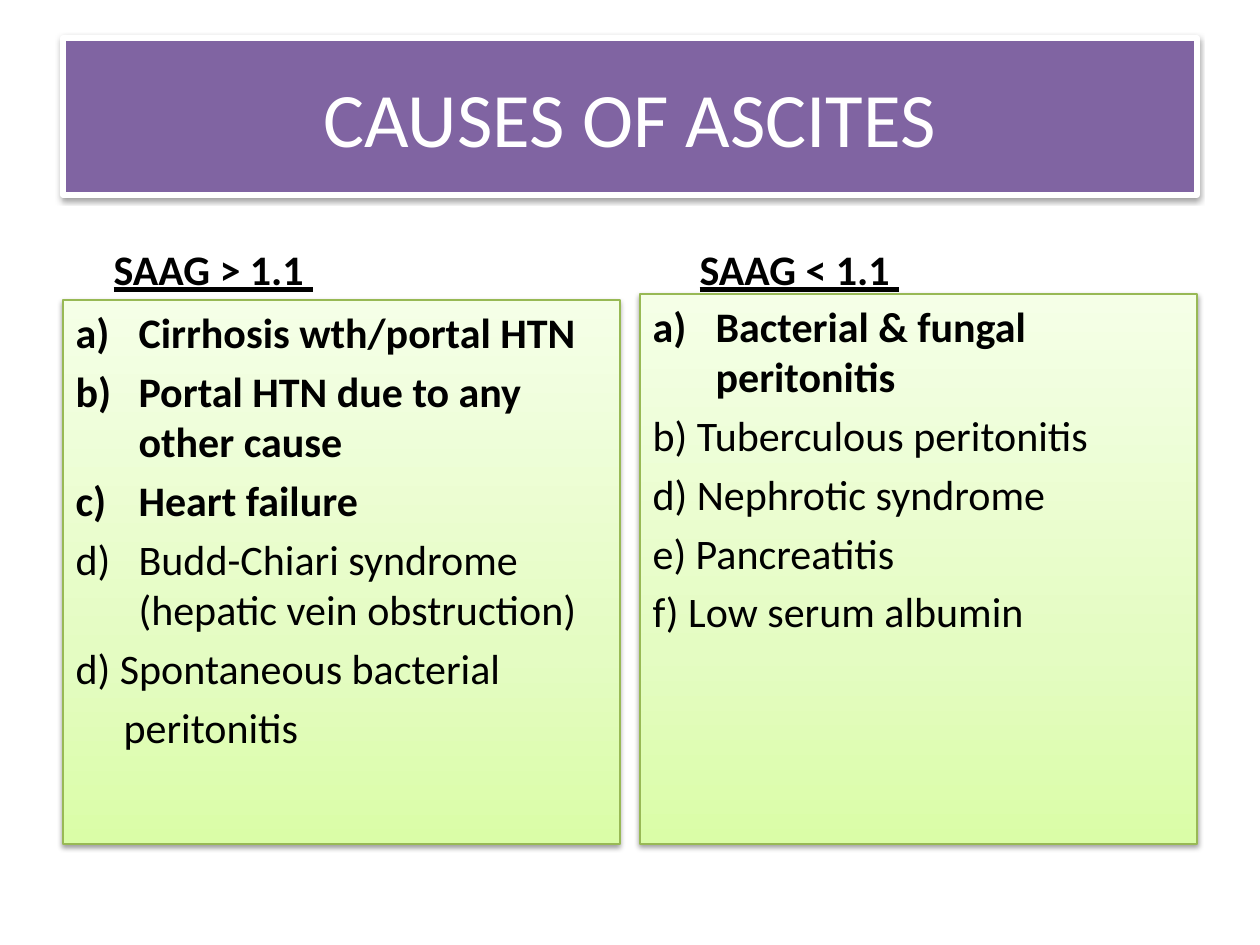
from dataclasses import dataclass

from lxml import etree
from pptx import Presentation
from pptx import util as u
from pptx.dml.color import RGBColor
from pptx.enum import text
from pptx.oxml import ns

PX = 914400 / 126


@dataclass(frozen=True)
class Theme:
    """Colours and type sizes of the slide."""
    font: str = "Calibri"
    purple: str = "8064A2"
    white: str = "FFFFFF"
    black: str = "000000"
    green_line: str = "98B955"
    green_stops: tuple = ((0, "DAFDA7"), (35, "E4FCC2"), (100, "F5FFE7"))
    title_size: int = 44
    body_size: int = 24


THEME = Theme()
COLUMNS = (
    dict(left=63, top=300, heading="SAAG > 1.1 ", heading_indent=38, causes=(
        ("Cirrhosis wth/portal HTN", True, True),
        ("Portal HTN due to any other cause", True, True),
        ("Heart failure", True, True),
        ("Budd-Chiari syndrome (hepatic vein obstruction)", True, False),
        ("d) Spontaneous bacterial", False, False),
        ("peritonitis", False, False, 48))),
    dict(left=640, top=294, heading="SAAG < 1.1 ", heading_indent=47, causes=(
        ("Bacterial & fungal peritonitis", True, True),
        ("b) Tuberculous peritonitis", False, False),
        ("d) Nephrotic syndrome", False, False),
        ("e) Pancreatitis", False, False),
        ("f) Low serum albumin", False, False))),
)


def px(length):
    """Turn px into EMU."""
    return u.Emu(round(length * PX))


def add_xml(parent, tag, **attributes):
    """Append a DrawingML element and return it."""
    return etree.SubElement(parent, ns.qn(tag), {k: str(v) for k, v in attributes.items()})


def place(holder, box, anchor):
    """Move a placeholder to a box and return its text frame."""
    holder.left, holder.top, holder.width, holder.height = map(px, box)
    frame = holder.text_frame
    frame.word_wrap = True
    frame.auto_size = text.MSO_AUTO_SIZE.NONE
    frame.vertical_anchor = anchor
    return frame


def style(paragraph, size, color, bold=False, underline=False):
    """Format the runs of a paragraph."""
    for run in paragraph.runs:
        font = run.font
        font.name, font.size = THEME.font, u.Pt(size)
        font.bold, font.underline = bold, underline
        font.color.rgb = RGBColor.from_string(color)


def indent(paragraph, left, hanging=0, numbering=None):
    """Set the indent and the numbering of a paragraph."""
    properties = paragraph._p.get_or_add_pPr()
    properties.set("marL", str(px(left)))
    properties.set("indent", str(px(-hanging)))
    if numbering:
        add_xml(properties, "a:buFont", typeface="+mj-lt")
        add_xml(properties, "a:buAutoNum", type=numbering)
    else:
        add_xml(properties, "a:buNone")


def outline_and_shadow(shape, color, width):
    """Give a panel its border and soft drop shadow."""
    shape.line.color.rgb = RGBColor.from_string(color)
    shape.line.width = u.Pt(width)
    effects = add_xml(shape._element.spPr, "a:effectLst")
    shadow = add_xml(effects, "a:outerShdw", blurRad=u.Pt(3.1), dist=u.Pt(1.6),
                     dir=5400000, rotWithShape=0)
    add_xml(add_xml(shadow, "a:srgbClr", val=THEME.black), "a:alpha", val=38000)


def green_gradient(shape):
    """Fill a panel with green that fades towards the top."""
    shape.fill.gradient()
    gradient = shape._element.spPr.find(ns.qn("a:gradFill"))
    for child in list(gradient):
        gradient.remove(child)
    stops = add_xml(gradient, "a:gsLst")
    for position, color in THEME.green_stops:
        add_xml(add_xml(stops, "a:gs", pos=position * 1000), "a:srgbClr", val=color)
    add_xml(gradient, "a:lin", ang=270 * 60000, scaled=0)


def title_banner(banner, box):
    """Build the purple title banner."""
    frame = place(banner, box, text.MSO_ANCHOR.MIDDLE)
    frame.text = "CAUSES OF ASCITES"
    frame.paragraphs[0].alignment = text.PP_ALIGN.CENTER
    style(frame.paragraphs[0], THEME.title_size, THEME.white)
    banner.fill.solid()
    banner.fill.fore_color.rgb = RGBColor.from_string(THEME.purple)
    outline_and_shadow(banner, THEME.white, 3)


def column_heading(holder, box, wording, left_indent):
    """Build the underlined heading of a column."""
    frame = place(holder, box, text.MSO_ANCHOR.BOTTOM)
    frame.text = wording
    heading = frame.paragraphs[0]
    indent(heading, left_indent)
    heading.space_before = u.Pt(0)
    style(heading, THEME.body_size, THEME.black, bold=True, underline=True)


def cause_panel(panel, box, causes):
    """Build the green panel that lists causes."""
    frame = place(panel, box, text.MSO_ANCHOR.TOP)
    frame.text = "\n".join(cause[0] for cause in causes)
    for paragraph, (_, numbered, bold, *left) in zip(frame.paragraphs, causes):
        if numbered:
            indent(paragraph, 63, 63, "alphaLcParenR")
        else:
            indent(paragraph, *(left or [0]))
        style(paragraph, THEME.body_size, THEME.black, bold)
    frame.paragraphs[0].space_before = u.Pt(0)
    green_gradient(panel)
    outline_and_shadow(panel, THEME.green_line, 0.75)


def saag_column(heading, panel, box, column):
    """Build one column from a heading above a panel of causes."""
    left, top, width, height = box
    split = column["top"]
    column_heading(heading, (left, top, width, 88), column["heading"],
                   column["heading_indent"])
    cause_panel(panel, (left, split, width, top + height - split), column["causes"])


def main():
    """Build and save the slide."""
    deck = Presentation()
    deck.slide_width, deck.slide_height = px(1260), px(945)
    slide = deck.slides.add_slide(deck.slide_layouts[4])
    title, *bodies = slide.placeholders
    title_banner(title, (63, 38, 1134, 157))
    for heading, panel, column in zip(bodies[::2], bodies[1::2], COLUMNS):
        saag_column(heading, panel, (column["left"], 212, 557, 632), column)
    deck.save("out.pptx")


if __name__ == "__main__":
    main()
